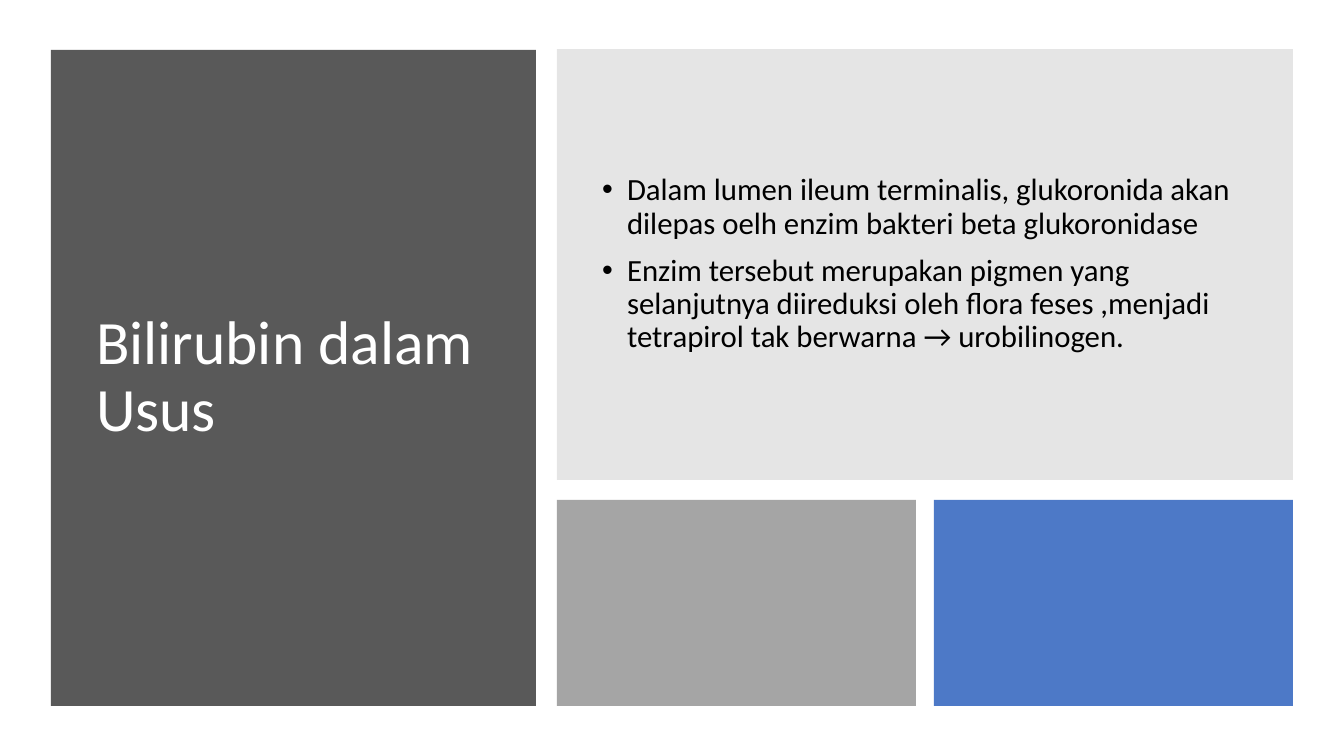
from lxml.etree import SubElement
from pptx import Presentation
from pptx.dml.color import RGBColor
from pptx.enum.shapes import MSO_SHAPE
from pptx.enum.text import MSO_ANCHOR, MSO_AUTO_SIZE, PP_ALIGN
from pptx.oxml.ns import qn
from pptx.util import Pt

EMU_PER_PX = 914400 / 100.8
WIDTH, HEIGHT = 1344, 756
TITLE = "Bilirubin dalam Usus"
POINTS = [
    "Dalam lumen ileum terminalis, glukoronida akan dilepas oelh enzim bakteri beta glukoronidase",
    "Enzim tersebut merupakan pigmen yang selanjutnya diireduksi oleh flora feses ,menjadi "
    "tetrapirol tak berwarna → urobilinogen.",
]


def px(length):
    return round(length * EMU_PER_PX)


def color(code):
    return RGBColor.from_string(code)


def add_panel(slide, box, fill, opacity=100):
    panel = slide.shapes.add_shape(MSO_SHAPE.RECTANGLE, *map(px, box))
    panel.shadow.inherit = False
    panel.line.fill.background()
    panel.fill.solid()
    panel.fill.fore_color.rgb = color(fill)
    if opacity < 100:
        tint = panel.element.spPr.find(qn("a:solidFill"))[0]
        SubElement(tint, qn("a:alpha"), val=str(opacity * 1000))


def place_text(slide, holder, box, inset_x, inset_y):
    left, top, width, height = box
    slide.shapes.element.append(holder.element)
    holder.left, holder.top = px(left + inset_x), px(top + inset_y)
    holder.width, holder.height = px(width - 2 * inset_x), px(height - 2 * inset_y)
    frame = holder.text_frame
    frame.word_wrap = True
    frame.auto_size = MSO_AUTO_SIZE.NONE
    frame.vertical_anchor = MSO_ANCHOR.MIDDLE
    return frame


def write(paragraph, words, size, ink, space_before):
    paragraph.alignment = PP_ALIGN.LEFT
    paragraph.line_spacing = 0.9
    paragraph.space_before = Pt(space_before)
    run = paragraph.add_run()
    run.text = words
    run.font.name = "Calibri"
    run.font.size = Pt(size)
    run.font.color.rgb = color(ink)


def add_bullet(paragraph):
    props = paragraph._p.get_or_add_pPr()
    props.set("marL", str(px(25)))
    props.set("indent", str(-px(25)))
    SubElement(props, qn("a:buFont"), typeface="Arial")
    SubElement(props, qn("a:buChar"), char="•")


def title_region(slide, box):
    add_panel(slide, box, "595959")
    heading = place_text(slide, slide.shapes.title, box, 35, 32)
    write(heading.paragraphs[0], TITLE, 44, "FFFFFF", 0)


def points_region(slide, box):
    add_panel(slide, box, "808080", 20)
    points = place_text(slide, slide.placeholders[1], box, 35, 39)
    for index, words in enumerate(POINTS):
        point = points.add_paragraph() if index else points.paragraphs[0]
        write(point, words, 22, "000000", 10)
        add_bullet(point)


def accent_region(slide, box, gap):
    left, top, width, height = box
    tile = (width - gap) // 2
    for index, (fill, opacity) in enumerate([("A5A5A5", 100), ("4472C4", 95)]):
        add_panel(slide, (left + index * (tile + gap), top, tile, height), fill, opacity)


def main():
    deck = Presentation()
    deck.slide_width, deck.slide_height = px(WIDTH), px(HEIGHT)
    slide = deck.slides.add_slide(deck.slide_layouts[1])
    title_region(slide, (51, 50, 485, 656))
    points_region(slide, (557, 49, 736, 431))
    accent_region(slide, (557, 500, 736, 206), 18)
    deck.save("out.pptx")


if __name__ == "__main__":
    main()
